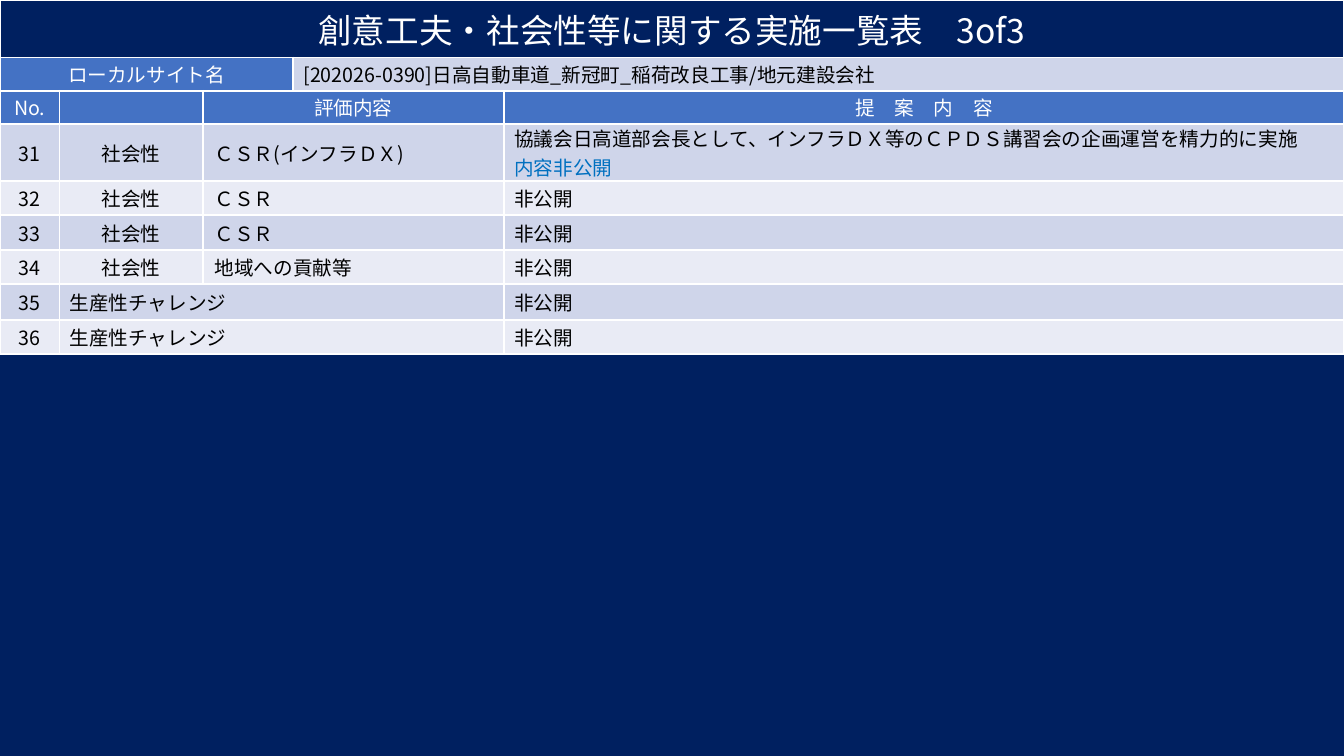
import pptx
import pptx.dml.color
import pptx.enum.text
import pptx.oxml.ns
import pptx.util
from lxml import etree

Inches = pptx.util.Inches
Pt = pptx.util.Pt
ALIGN = pptx.enum.text.PP_ALIGN
FACE = "Noto Sans CJK JP"
NAVY, BLUE, WHITE, BLACK, NOTE = "002060", "4472C4", "FFFFFF", "000000", "0070C0"
BANDS = ("CFD5EA", "E9EBF5")
COLUMNS = (0.59, 1.42, 0.9, 2.09, 8.33)
ROWS = (0.57, 0.33, 0.33, 0.34, 0.34, 0.34, 0.34, 0.36, 0.34)
TITLE = "創意工夫・社会性等に関する実施一覧表　3of3"
SITE = "[202026-0390]日高自動車道_新冠町_稲荷改良工事/地元建設会社"
HIDDEN = "非公開"
SEMINAR = "協議会日高道部会長として、インフラＤＸ等のＣＰＤＳ講習会の企画運営を精力的に実施　"
PROPOSALS = (
    ("社会性", "ＣＳＲ(インフラＤＸ)", SEMINAR, "内容非公開"),
    ("社会性", "ＣＳＲ", HIDDEN),
    ("社会性", "ＣＳＲ", HIDDEN),
    ("社会性", "地域への貢献等", HIDDEN),
    ("生産性チャレンジ", "", HIDDEN),
    ("生産性チャレンジ", "", HIDDEN),
)


def colour(value):
    """Turn a hex string into a colour."""
    return pptx.dml.color.RGBColor.from_string(value)


def add_node(parent, tag, **values):
    """Append a drawing element with the given attributes."""
    return etree.SubElement(parent, pptx.oxml.ns.qn(tag), values)


def format_cell(cell, fill):
    """Give a cell its white borders, fill, margins and text height."""
    properties = cell._tc.get_or_add_tcPr()
    for side in ("a:lnL", "a:lnR", "a:lnT", "a:lnB"):
        border = add_node(properties, side, w=str(Pt(1.5)))
        add_node(add_node(border, "a:solidFill"), "a:srgbClr", val=WHITE)
    cell.fill.solid()
    cell.fill.fore_color.rgb = colour(fill)
    settings = {
        "margin_left": Inches(0.1), "margin_right": Inches(0.1),
        "margin_top": 0, "margin_bottom": 0,
        "vertical_anchor": pptx.enum.text.MSO_ANCHOR.MIDDLE,
    }
    for name, value in settings.items():
        setattr(cell, name, value)
    add_node(cell.text_frame.paragraphs[0]._p, "a:endParaRPr", sz="1400")


def write(cell, text, ink=BLACK, size=14, align=ALIGN.LEFT):
    """Add a run of text to a cell."""
    para = cell.text_frame.paragraphs[0]
    para.alignment = align
    span = para.add_run()
    span.text = text
    span.font.color.rgb = colour(ink)
    for name, value in {"size": Pt(size), "name": FACE}.items():
        setattr(span.font, name, value)
    add_node(span.font._element, "a:ea", typeface=FACE)


def merge(table, row, first, last):
    """Join the cells of a row from the first to the last column."""
    table.cell(row, first).merge(table.cell(row, last))


def fill_heading(table):
    """Write the title, site and column heading rows."""
    for row, first, last in ((0, 0, 4), (1, 0, 2), (1, 3, 4), (2, 2, 3)):
        merge(table, row, first, last)
    write(table.cell(0, 0), TITLE, WHITE, 24, ALIGN.CENTER)
    write(table.cell(1, 0), "ローカルサイト名", WHITE, align=ALIGN.CENTER)
    write(table.cell(1, 3), SITE)
    for column, text in ((0, "No."), (2, "評価内容"), (4, "提　案　内　容")):
        write(table.cell(2, column), text, WHITE, align=ALIGN.CENTER)


def fill_proposals(table):
    """Write the numbered proposal rows."""
    for index, (group, topic, proposal, *notes) in enumerate(PROPOSALS):
        row = index + 3
        write(table.cell(row, 0), str(31 + index), align=ALIGN.CENTER)
        if topic:
            merge(table, row, 2, 3)
            write(table.cell(row, 1), group, align=ALIGN.CENTER)
            write(table.cell(row, 2), topic)
            table.cell(row, 2).margin_left = Inches(0.12)
        else:
            merge(table, row, 1, 3)
            write(table.cell(row, 1), group)
        write(table.cell(row, 4), proposal)
        for note in notes:
            write(table.cell(row, 4), note, NOTE)


def row_fill(row, column):
    """Choose the fill of a cell from its place."""
    if row == 0:
        return NAVY
    if row == 2 or (row == 1 and column < 3):
        return BLUE
    return BANDS[(row + 1) % 2]


def add_proposal_table(page, left, top):
    """Place the whole list with its corner at the given point."""
    frame = page.shapes.add_table(
        len(ROWS), len(COLUMNS), Inches(left), Inches(top),
        Inches(sum(COLUMNS)), Inches(sum(ROWS)))
    table = frame.table
    table.first_row = table.horz_banding = False
    for column, width in zip(table.columns, COLUMNS):
        column.width = Inches(width)
    for row, height in enumerate(ROWS):
        table.rows[row].height = Inches(height)
        for column in range(len(COLUMNS)):
            format_cell(table.cell(row, column), row_fill(row, column))
    fill_heading(table)
    fill_proposals(table)


def main():
    """Build and save the deck."""
    deck = pptx.Presentation()
    deck.slide_width, deck.slide_height = Inches(13.33), Inches(7.5)
    page = deck.slides.add_slide(deck.slide_layouts.get_by_name("Blank"))
    page.background.fill.solid()
    page.background.fill.fore_color.rgb = colour(NAVY)
    add_proposal_table(page, 0, 0)
    deck.save("out.pptx")


if __name__ == "__main__":
    main()
